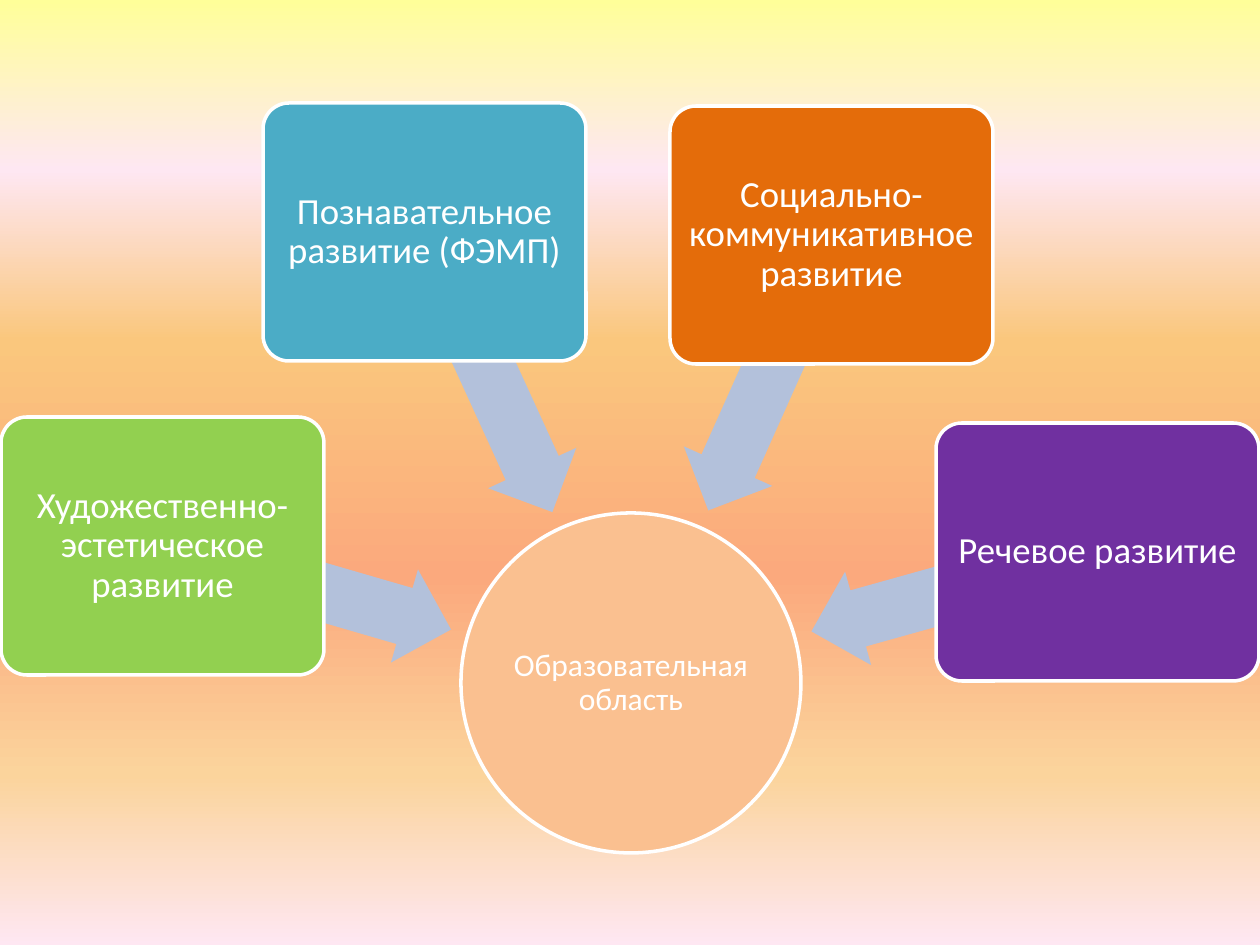
from lxml import etree
from pptx import Presentation
from pptx.dml.color import RGBColor
from pptx.enum.shapes import MSO_SHAPE
from pptx.enum.text import MSO_ANCHOR, PP_ALIGN
from pptx.oxml.ns import qn
from pptx.util import Pt

PX = 914400 / 126
ELLIPSE, ARROW, ROUNDED = MSO_SHAPE.OVAL, MSO_SHAPE.LEFT_ARROW, MSO_SHAPE.ROUNDED_RECTANGLE
MIDDLE, CENTER = MSO_ANCHOR.MIDDLE, PP_ALIGN.CENTER

BOX_WIDTH, BOX_HEIGHT = 323, 258
ARROW_HEIGHT = 97
BACKGROUND_STOPS = [(0, "FFFF99"), (18, "FEE7F2"), (36, "FAC77D"),
                    (61, "FBA97D"), (82, "FBD49C"), (100, "FEE7F2")]
# text, fill, box left and top, arrow left, top, width and rotation
AREAS = [
    ("Художественно- эстетическое развитие", "92D050", (1, 417), (156, 539, 301, 196.2)),
    ("Познавательное развитие (ФЭМП)", "4BACC6", (263, 103), (335, 324, 307, 245.4)),
    ("Социально-коммуникативное развитие", "E46C0A", (670, 106), (619, 324, 302, 294.1)),
    ("Речевое развитие", "7030A0", (936, 423), (806, 543, 297, 344.4)),
]


def add_filled_shape(kind, left, top, width, height, color):
    """Add a shape without shadow or outline, placed in px."""
    shape = slide.shapes.add_shape(kind, *(round(v * PX) for v in (left, top, width, height)))
    shape.shadow.inherit = False
    shape.fill.solid()
    shape.fill.fore_color.rgb = RGBColor.from_string(color)
    shape.line.fill.background()
    return shape


def add_label(shape, text, size, inset):
    """Give a shape its white outline and centred white text."""
    shape.line.color.rgb = RGBColor.from_string("FFFFFF")
    shape.line.width = Pt(2)
    frame = shape.text_frame
    frame.word_wrap = True
    frame.vertical_anchor = MIDDLE
    frame.margin_left = frame.margin_right = round(inset * PX)
    frame.margin_top = frame.margin_bottom = round(inset * PX)
    paragraph = frame.paragraphs[0]
    paragraph.text = text
    paragraph.alignment = CENTER
    paragraph.line_spacing = 0.9
    paragraph.font.name = "Calibri"
    paragraph.font.size = Pt(size)
    paragraph.font.color.rgb = RGBColor.from_string("FFFFFF")


presentation = Presentation()
presentation.slide_width = round(1260 * PX)
presentation.slide_height = round(945 * PX)
slide = presentation.slides.add_slide(presentation.slide_layouts[6])

background = slide.background.fill
background.gradient()
background.gradient_angle = 270
stop_list = slide.element.find(".//" + qn("a:gsLst"))
for stop in list(stop_list):
    stop_list.remove(stop)
for percent, color in BACKGROUND_STOPS:
    stop = etree.SubElement(stop_list, qn("a:gs"), pos=str(percent * 1000))
    etree.SubElement(stop, qn("a:srgbClr"), val=color)

center_circle = add_filled_shape(ELLIPSE, 461, 513, 340, 340, "FAC090")
add_label(center_circle, "Образовательная область", 18, 0)

for text, color, (left, top), (arrow_left, arrow_top, arrow_width, rotation) in AREAS:
    arrow = add_filled_shape(ARROW, arrow_left, arrow_top, arrow_width, ARROW_HEIGHT, "B3C1DB")
    arrow.adjustments[0] = 0.6
    arrow.adjustments[1] = 0.5
    arrow.rotation = rotation

    box = add_filled_shape(ROUNDED, left, top, BOX_WIDTH, BOX_HEIGHT, color)
    box.adjustments[0] = 0.1
    add_label(box, text, 21, 5)

presentation.save("out.pptx")
